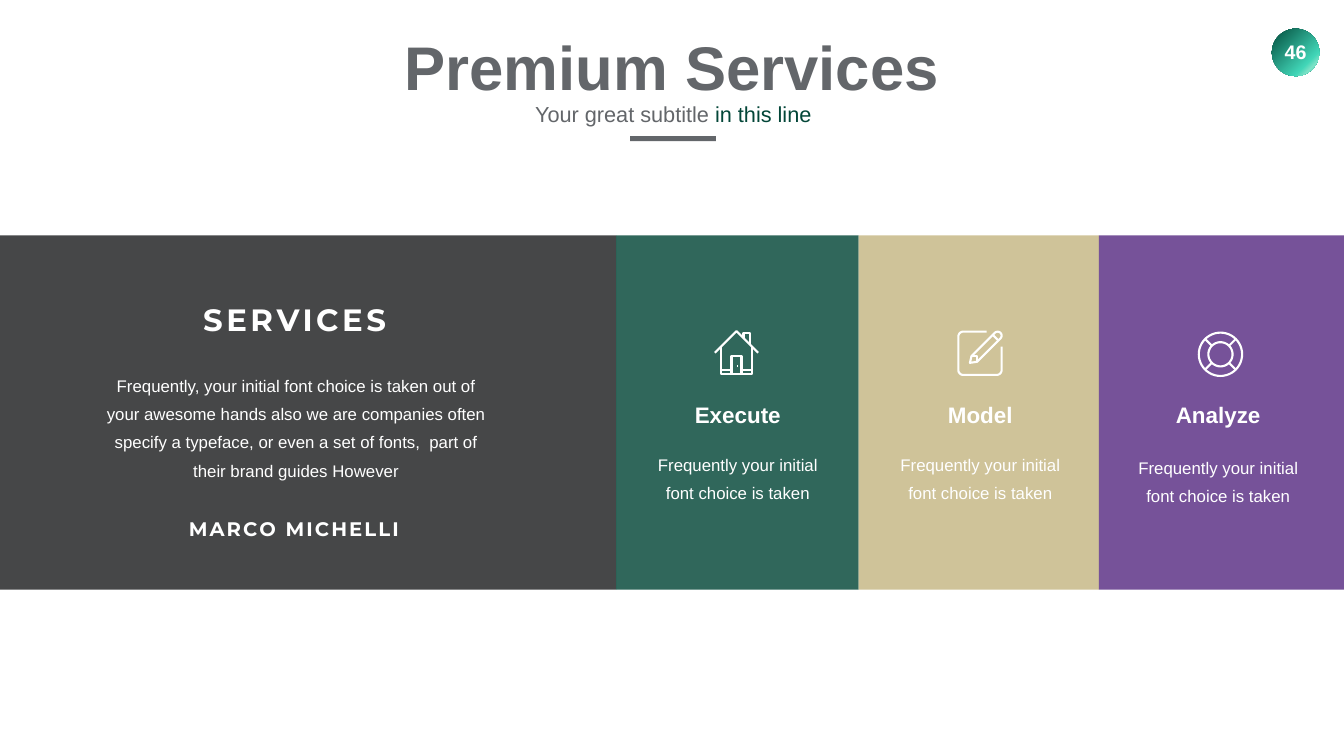
from math import cos, radians, sin

from lxml.etree import SubElement
from pptx import Presentation
from pptx.dml.color import RGBColor
from pptx.enum.shapes import MSO_SHAPE
from pptx.enum.text import MSO_ANCHOR, MSO_AUTO_SIZE, PP_ALIGN
from pptx.oxml.ns import qn
from pptx.util import Inches, Pt

COLORS = {
    "gray": "63666A", "green": "034638", "sand": "C5B783",
    "purple": "582C83", "dark": "323335", "white": "FFFFFF",
}
BADGE_STOPS = [(0, "024C3C"), (74, "42D6B8"), (83, "7FE3C8"), (100, "28CCAC")]
SLIDE_WIDTH, SLIDE_HEIGHT = 26.66, 15
BAND_TOP, BAND_HEIGHT = 4.67, 7.03


def rgb(name):
    return RGBColor.from_string(COLORS[name])


def add_block(slide, kind, box, color, opacity=100):
    shape = slide.shapes.add_shape(kind, *map(Inches, box))
    shape.shadow.inherit = False
    shape.line.fill.background()
    shape.fill.solid()
    shape.fill.fore_color.rgb = rgb(color)
    if opacity < 100:
        color_element = shape._element.spPr.find(qn("a:solidFill"))[0]
        SubElement(color_element, qn("a:alpha"), val=str(opacity * 1000))
    return shape


def fill_text(shape, runs, size, font="Arial", bold=False, spacing=None, tracking=0,
              inset=(0.1, 0.05), anchor=MSO_ANCHOR.TOP, wrap=False):
    """Fill a shape with one centred paragraph of (text, color) runs."""
    frame = shape.text_frame
    frame.word_wrap = wrap
    frame.auto_size = MSO_AUTO_SIZE.NONE
    frame.vertical_anchor = anchor
    frame.margin_left = frame.margin_right = Inches(inset[0])
    frame.margin_top = frame.margin_bottom = Inches(inset[1])
    paragraph = frame.paragraphs[0]
    paragraph.alignment = PP_ALIGN.CENTER
    paragraph.space_before = Pt(0)
    if spacing:
        paragraph.line_spacing = spacing
    for text, color in runs:
        run = paragraph.add_run()
        run.text = text
        run.font.name, run.font.size, run.font.bold = font, Pt(size), bold
        run.font.color.rgb = rgb(color)
        if tracking:
            run.font._element.set("spc", str(tracking * 100))


def add_text(slide, box, runs, size, **style):
    fill_text(slide.shapes.add_textbox(*map(Inches, box)), runs, size, **style)


def add_body(slide, box, text):
    add_text(slide, box, [(text, "white")], 24, spacing=Pt(40.4), inset=(0.24, 0.12), wrap=True)


def arc(center_x, center_y, radius, start, end, steps=8):
    angles = [radians(start + (end - start) * step / steps) for step in range(steps + 1)]
    return [(center_x + radius * cos(a), center_y + radius * sin(a)) for a in angles]


def house_strokes():
    return [
        [(0.02, 0.45), (0.45, 0.02), (0.88, 0.45)],
        [(0.14, 0.33), (0.14, 0.88), (0.75, 0.88), (0.75, 0.33)],
        [(0.35, 0.88), (0.35, 0.51), (0.55, 0.51), (0.55, 0.88)],
        [(0.59, 0.16), (0.59, 0.06), (0.71, 0.06), (0.71, 0.28)],
        [(0.14, 0.8), (0.35, 0.8)],
        [(0.55, 0.8), (0.75, 0.8)],
        [(0.46, 0.72), (0.48, 0.72)],
    ]


def pencil_strokes():
    frame = [(0.58, 0.02), *arc(0.12, 0.12, 0.1, 270, 180), *arc(0.12, 0.78, 0.1, 180, 90),
             *arc(0.78, 0.78, 0.1, 90, 0), (0.88, 0.32)]
    pencil = [(0.25, 0.64), (0.28, 0.51), *arc(0.8, 0.1, 0.08, 225, 405),
              (0.39, 0.62), (0.25, 0.64)]
    nib = [(0.28, 0.51), (0.39, 0.51), (0.39, 0.62)]
    return [frame, pencil, nib, [(0.71, 0.09), (0.81, 0.19)]]


def lifebuoy_strokes():
    center, radii = 0.45, (0.24, 0.43)
    rings = [arc(center, center, radius, 0, 360, 48) for radius in radii]
    spokes = [[arc(center, center, radius, angle, angle)[0] for radius in radii]
              for angle in (45, 135, 225, 315)]
    return rings + spokes


def add_icon(slide, left, top, strokes):
    """Draw polylines, given as offsets from the icon corner, as one white outline."""
    contours = [[(Inches(left + x), Inches(top + y)) for x, y in stroke] for stroke in strokes]
    builder = slide.shapes.build_freeform(*contours[0][0])
    for index, (start, *rest) in enumerate(contours):
        if index:
            builder.move_to(*start)
        builder.add_line_segments(rest, close=start == rest[-1])
    icon = builder.convert_to_shape()
    icon.shadow.inherit = False
    icon.fill.background()
    icon.line.color.rgb = rgb("white")
    icon.line.width = Pt(3)


def add_header(slide, center):
    title = slide.shapes.title
    title.left, title.top, title.width, title.height = map(
        Inches, (center - 5.46, 0.53, 10.91, 1.58))
    fill_text(title, [("Premium Services", "gray")], 88, bold=True)
    add_text(slide, (center + 0.01 - 3, 1.77, 6.03, 0.81),
             [("Your great subtitle ", "gray"), ("in this line", "green")], 31,
             spacing=1.2, inset=(0.24, 0.12))
    add_block(slide, MSO_SHAPE.RECTANGLE, (center + 0.02 - 0.85, 2.7, 1.7, 0.1), "gray")


def add_page_badge(slide, left, top, size):
    badge = add_block(slide, MSO_SHAPE.OVAL, (left, top, size, size), "green")
    badge.fill.gradient()
    badge.fill.gradient_angle = 315
    stops = badge._element.spPr.find(qn("a:gradFill")).find(qn("a:gsLst"))
    for stop in list(stops):
        stops.remove(stop)
    for position, color in BADGE_STOPS:
        stop = SubElement(stops, qn("a:gs"), pos=str(position * 1000))
        SubElement(stop, qn("a:srgbClr"), val=color)
    add_text(slide, (left + 0.03, top + 0.12, 0.88, 0.67), [("46", "white")], 28,
             bold=True, inset=(0.2, 0.1))


def add_services_panel(slide, left, top, width, height):
    add_block(slide, MSO_SHAPE.RECTANGLE, (left, top, width, height), "dark", 90)
    heading = {"font": "Montserrat", "bold": True, "anchor": MSO_ANCHOR.MIDDLE}
    add_text(slide, (left + 3.84, top + 0.91, 4.01, 1.06), [("SERVICES", "white")], 44,
             spacing=Pt(85), tracking=5, inset=(0, 0), **heading)
    add_body(slide, (left + 1.73, top + 2.5, 8.28, 2.48),
             "Frequently, your initial font choice is taken out of your awesome hands also "
             "we are companies often specify a typeface, or even a set of fonts,  part of "
             "their brand guides However")
    add_text(slide, (left + 3.51, top + 5.54, 4.64, 0.57), [("MARCO MICHELLI", "white")], 28,
             tracking=3, **heading)


def add_service_card(slide, left, top, width, height, color, label, strokes,
                     icon_offset, text_offset, body_offset):
    add_block(slide, MSO_SHAPE.RECTANGLE, (left, top, width, height), color, 82)
    add_icon(slide, left + icon_offset[0], top + icon_offset[1], strokes)
    text_left, text_width = left + text_offset, 4.27
    add_text(slide, (text_left, top + 3.24, text_width, 0.64), [(label, "white")], 32,
             bold=True, anchor=MSO_ANCHOR.MIDDLE)
    add_body(slide, (text_left, top + body_offset, text_width, 1.31),
             "Frequently your initial font choice is taken")


def main():
    presentation = Presentation()
    presentation.slide_width = Inches(SLIDE_WIDTH)
    presentation.slide_height = Inches(SLIDE_HEIGHT)
    slide = presentation.slides.add_slide(presentation.slide_layouts[5])
    add_header(slide, SLIDE_WIDTH / 2)
    add_page_badge(slide, 25.23, 0.57, 0.94)
    add_services_panel(slide, 0, BAND_TOP, 12.22, BAND_HEIGHT)
    cards = [
        (12.22, 4.81, "green", "Execute", house_strokes(), (1.94, 1.88), 0.28, 4.07),
        (17.03, 4.77, "sand", "Model", pencil_strokes(), (1.96, 1.89), 0.28, 4.07),
        (21.8, 4.86, "purple", "Analyze", lifebuoy_strokes(), (1.96, 1.91), 0.23, 4.13),
    ]
    for left, width, *content in cards:
        add_service_card(slide, left, BAND_TOP, width, BAND_HEIGHT, *content)
    presentation.save("out.pptx")


if __name__ == "__main__":
    main()
